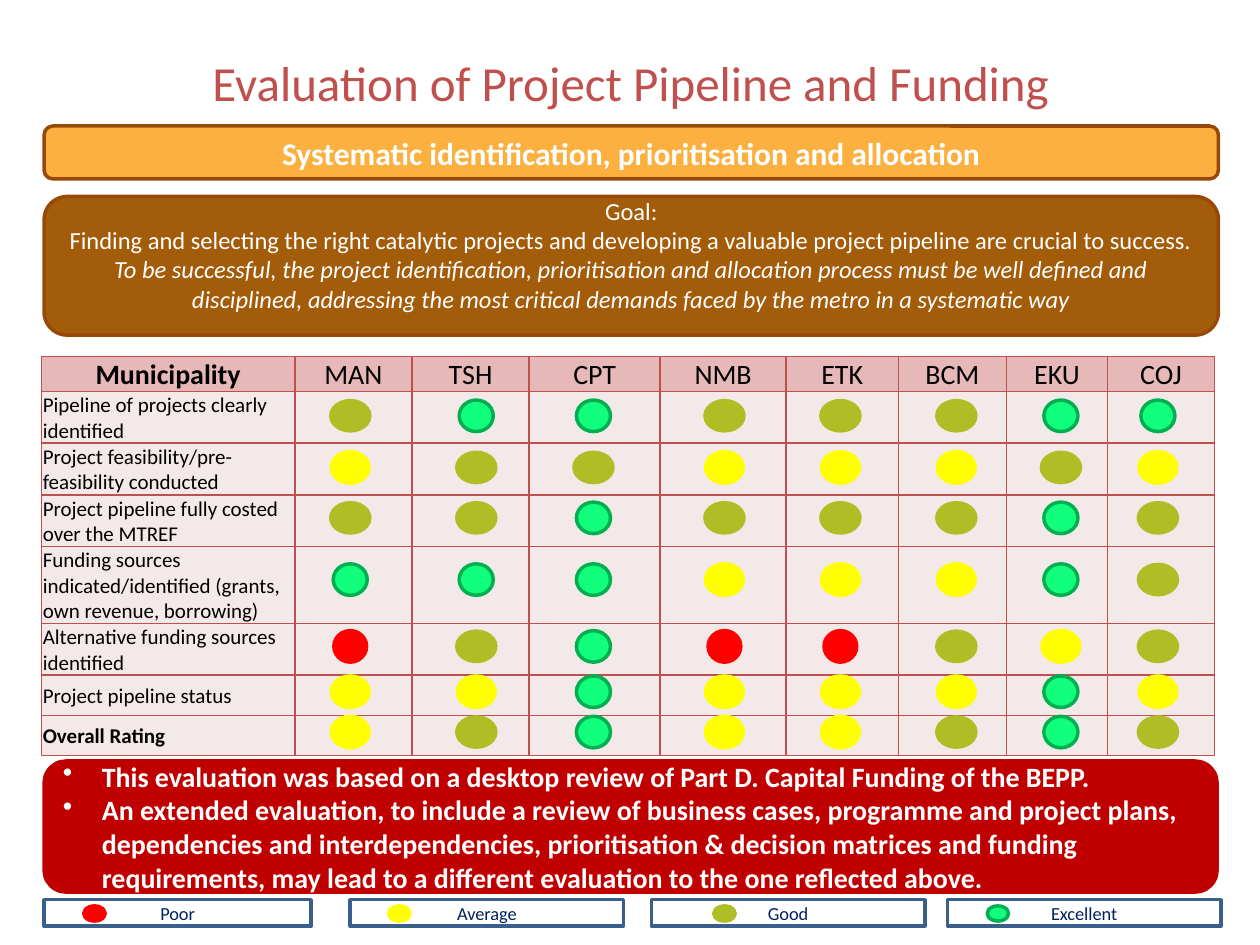
from typing import NamedTuple

from lxml import etree
from pptx import Presentation
from pptx.dml.color import RGBColor
from pptx.enum.shapes import MSO_SHAPE
from pptx.enum.text import MSO_ANCHOR, PP_ALIGN
from pptx.oxml.ns import qn
from pptx.util import Inches, Pt

RECT, ROUNDED, OVAL = MSO_SHAPE.RECTANGLE, MSO_SHAPE.ROUNDED_RECTANGLE, MSO_SHAPE.OVAL
LEFT, CENTER = PP_ALIGN.LEFT, PP_ALIGN.CENTER
MIDDLE, BOTTOM = MSO_ANCHOR.MIDDLE, MSO_ANCHOR.BOTTOM

FONT = "Calibri"
WHITE = RGBColor(0xFF, 0xFF, 0xFF)
BLACK = RGBColor(0, 0, 0)
BRICK = RGBColor(0xC0, 0x50, 0x4D)
AMBER = RGBColor(0xFB, 0xB0, 0x40)
BROWN = RGBColor(0xA2, 0x5C, 0x0A)
DARK_BROWN = RGBColor(0x98, 0x48, 0x07)
CRIMSON = RGBColor(0xC0, 0, 0)
HEADER_PINK = RGBColor(0xE6, 0xB9, 0xB8)
BODY_PINK = RGBColor(0xF4, 0xE9, 0xE9)
STEEL = RGBColor(0x3A, 0x5F, 0x8C)
NAVY = RGBColor(0, 0x20, 0x60)
RED = RGBColor(0xFF, 0, 0)
YELLOW = RGBColor(0xFF, 0xFF, 0)
OLIVE = RGBColor(0xAF, 0xBE, 0x24)
MINT = RGBColor(0x11, 0xFF, 0x7D)
GREEN = RGBColor(0, 0xB0, 0x50)


class Rating(NamedTuple):
    fill: RGBColor
    line: RGBColor
    width: float
    height: float


class Metro(NamedTuple):
    name: str
    col_width: float
    dot_x: float


class Criterion(NamedTuple):
    label: str
    height: float
    dot_y: float
    ratings: str  # one rating letter per metro


class LegendItem(NamedTuple):
    label: str
    rating: str
    left: float
    width: float
    dot_x: float


RATINGS = {
    "P": Rating(RED, RED, 0.26, 0.25),
    "A": Rating(YELLOW, YELLOW, 0.3, 0.25),
    "G": Rating(OLIVE, OLIVE, 0.31, 0.24),
    "E": Rating(MINT, GREEN, 0.27, 0.25),
}
METROS = [
    Metro("MAN", 0.93, 2.78), Metro("TSH", 0.93, 3.78), Metro("CPT", 1.04, 4.71),
    Metro("NMB", 1, 5.75), Metro("ETK", 0.89, 6.67), Metro("BCM", 0.86, 7.59),
    Metro("EKU", 0.8, 8.42), Metro("COJ", 0.85, 9.19),
]
CRITERIA = [
    Criterion("Pipeline of projects clearly identified", 0.38, 3.3, "GEEGGGEE"),
    Criterion("Project feasibility/pre-feasibility conducted", 0.38, 3.71, "AGGAAAGA"),
    Criterion("Project pipeline fully costed over the MTREF", 0.38, 4.11, "GGEGGGEG"),
    Criterion("Funding sources indicated/identified (grants, own revenue, borrowing)",
              0.56, 4.6, "EEEAAAEG"),
    Criterion("Alternative funding sources identified", 0.38, 5.13, "PGEPPGAG"),
    Criterion("Project pipeline status", 0.32, 5.49, "AAEAAAEA"),
    Criterion("Overall Rating", 0.32, 5.81, "AGEAAGEG"),
]
LEGEND = [
    LegendItem("Poor", "P", 0.35, 2.12, 0.75),
    LegendItem("Average", "A", 2.78, 2.17, 3.17),
    LegendItem("Good", "G", 5.17, 2.17, 5.75),
    LegendItem("Excellent", "E", 7.52, 2.17, 7.92),
]


def write(tf, lines: list[str], size: float, color: RGBColor,
          bold: bool = False, align=CENTER) -> None:
    """Put one paragraph per line into a text frame."""
    tf.word_wrap = True
    for i, line in enumerate(lines):
        p = tf.paragraphs[0] if i == 0 else tf.add_paragraph()
        p.add_run().text = line
        p.alignment = align
        p.font.name, p.font.size, p.font.bold = FONT, Pt(size), bold
        p.font.color.rgb = color


def add_box(s, shape, left: float, top: float, width: float, height: float,
            fill: RGBColor, line: RGBColor):
    sp = s.shapes.add_shape(shape, Inches(left), Inches(top), Inches(width), Inches(height))
    sp.shadow.inherit = False
    sp.fill.solid()
    sp.fill.fore_color.rgb = fill
    sp.line.color.rgb = line
    sp.line.width = Pt(2)
    sp.text_frame.vertical_anchor = MIDDLE
    return sp


def add_dot(s, rating: Rating, x: float, y: float, width: float, height: float) -> None:
    """Draw a rating dot centred on x, y."""
    add_box(s, OVAL, x - width / 2, y - height / 2, width, height, rating.fill, rating.line)


def add_bullets(tf) -> None:
    for p in tf.paragraphs:
        pPr = p._p.get_or_add_pPr()
        pPr.set("marL", str(Inches(0.31)))
        pPr.set("indent", str(-Inches(0.31)))
        bullet = etree.Element(qn("a:buChar"), char="•")
        pPr.insert(0, bullet)  # bullets precede the default run properties


def style_cell(cell, fill: RGBColor, anchor) -> None:
    cell.margin_left = cell.margin_right = cell.margin_top = Inches(0.01)
    cell.margin_bottom = 0
    cell.vertical_anchor = anchor
    tcPr = cell._tc.get_or_add_tcPr()
    for side in ("a:lnL", "a:lnR", "a:lnT", "a:lnB"):
        ln = etree.SubElement(tcPr, qn(side), w=str(Pt(1)))
        solid = etree.SubElement(ln, qn("a:solidFill"))
        etree.SubElement(solid, qn("a:srgbClr"), val=str(BRICK))
    cell.fill.solid()
    cell.fill.fore_color.rgb = fill


def add_ratings_table(s) -> None:
    widths = [2.01] + [m.col_width for m in METROS]
    heights = [0.25] + [c.height for c in CRITERIA]
    table = s.shapes.add_table(len(heights), len(widths), Inches(0.33), Inches(2.83),
                               Inches(sum(widths)), Inches(sum(heights))).table
    table.first_row = table.horz_banding = False
    for col, width in zip(table.columns, widths):
        col.width = Inches(width)
    for i, (row, height) in enumerate(zip(table.rows, heights)):
        row.height = Inches(height)
        for cell in row.cells:
            style_cell(cell, BODY_PINK if i else HEADER_PINK, MIDDLE if i else BOTTOM)
    for j, name in enumerate(["Municipality"] + [m.name for m in METROS]):
        write(table.cell(0, j).text_frame, [name], 16, BLACK, bold=j == 0)
    for i, c in enumerate(CRITERIA, 1):
        write(table.cell(i, 0).text_frame, [c.label], 12, BLACK,
              bold=i == len(CRITERIA), align=LEFT)


def main() -> None:
    prs = Presentation()
    prs.slide_width, prs.slide_height = Inches(10), Inches(7.5)
    s = prs.slides.add_slide(prs.slide_layouts[6])

    # Title
    tf = s.shapes.add_textbox(Inches(0.17), Inches(0.42), Inches(9.67), Inches(0.51)).text_frame
    tf.margin_left = tf.margin_right = tf.margin_top = tf.margin_bottom = 0
    write(tf, ["Evaluation of Project Pipeline and Funding"], 28, BRICK)

    # Heading banner and goal
    sp = add_box(s, ROUNDED, 0.35, 1, 9.32, 0.42, AMBER, DARK_BROWN)
    write(sp.text_frame, ["Systematic identification, prioritisation and allocation"],
          18, WHITE, bold=True)
    tf = add_box(s, ROUNDED, 0.35, 1.56, 9.32, 1.1, BROWN, DARK_BROWN).text_frame
    tf.margin_top, tf.margin_bottom = 0, Inches(0.18)
    write(tf, [
        "Goal:",
        "Finding and selecting the right catalytic projects and developing a valuable "
        "project pipeline are crucial to success.",
        "To be successful, the project identification, prioritisation and allocation process "
        "must be well defined and disciplined, addressing the most critical demands faced by "
        "the metro in a systematic way",
    ], 14, WHITE)
    tf.paragraphs[-1].font.italic = True

    # Ratings
    add_ratings_table(s)
    for c in CRITERIA:
        for metro, letter in zip(METROS, c.ratings):
            rating = RATINGS[letter]
            add_dot(s, rating, metro.dot_x, c.dot_y, rating.width, rating.height)

    # Remarks
    tf = add_box(s, ROUNDED, 0.35, 6.04, 9.31, 1.04, CRIMSON, CRIMSON).text_frame
    write(tf, [
        "This evaluation was based on a desktop review of Part D. Capital Funding of the BEPP.",
        "An extended evaluation, to include a review of business cases, programme and project "
        "plans, dependencies and interdependencies, prioritisation & decision matrices and "
        "funding requirements, may lead to a different evaluation to the one reflected above.",
    ], 16, WHITE, bold=True, align=LEFT)
    add_bullets(tf)

    # Legend
    for item in LEGEND:
        sp = add_box(s, RECT, item.left, 7.14, item.width, 0.21, WHITE, STEEL)
        write(sp.text_frame, [item.label], 10.5, NAVY)
        add_dot(s, RATINGS[item.rating], item.dot_x, 7.25, 0.17, 0.12)

    prs.save("out.pptx")


if __name__ == "__main__":
    main()
